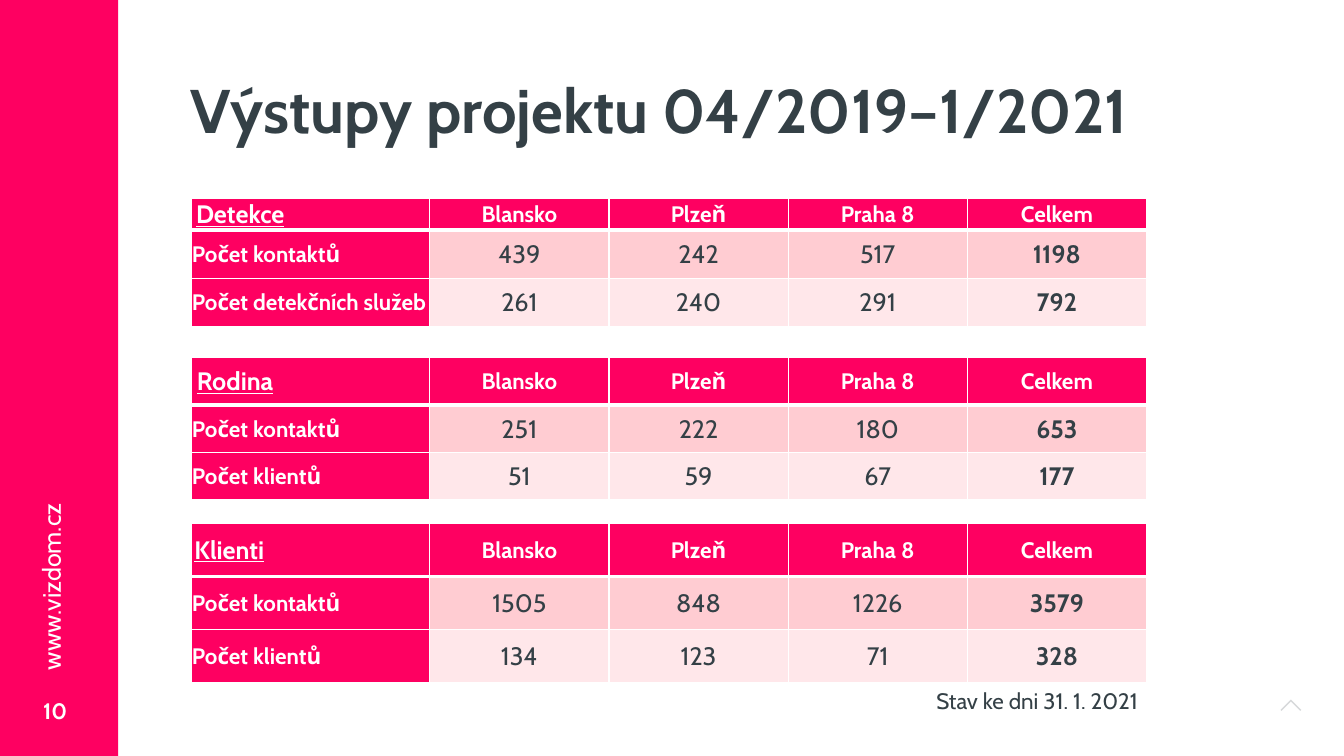
from lxml import etree
from pptx import Presentation, util as u
from pptx.dml.color import RGBColor
from pptx.enum import shapes, text
from pptx.oxml import ns

HUES = {"pink": "FE0061", "rose": "FFCCD2", "pale": "FFE7EA",
        "ink": "344046", "white": "FFFFFF"}
CITIES = ["Blansko", "Plzeň", "Praha 8", "Celkem"]
TABLES = [
    (141.9, [22.4, 34.4, 34.4], "Detekce", 3.6,
     [["Počet kontaktů", "439", "242", "517", "1198"],
      ["Počet detekčních služeb", "261", "240", "291", "792"]]),
    (255.6, [33.7] * 3, "Rodina", 4.3,
     [["Počet kontaktů", "251", "222", "180", "653"],
      ["Počet klientů", "51", "59", "67", "177"]]),
    (373.8, [37.9] * 3, "Klienti", 2.5,
     [["Počet kontaktů", "1505", "848", "1226", "3579"],
      ["Počet klientů", "134", "123", "71", "328"]]),
]


class Deck:
    """Holds the style and the current slide, and draws each kind of element."""

    def __init__(self, font):
        self.font = font
        self.file = Presentation()
        self.file.slide_width, self.file.slide_height = u.Pt(960), u.Pt(540)
        self.slide = self.file.slides.add_slide(self.file.slide_layouts[5])

    def hue(self, name):
        return RGBColor.from_string(HUES[name])

    def paint(self, item, name):
        item.fill.solid()
        item.fill.fore_color.rgb = self.hue(name)

    def run(self, para, words, size, hue, bold=False, line=False):
        run = para.add_run()
        run.text = words
        font = run.font
        font.name, font.size = self.font, u.Pt(size)
        font.bold, font.underline = bold, line
        font.color.rgb = self.hue(hue)

    def title(self, box, words):
        head = self.slide.shapes.title
        head.left, head.top, head.width, head.height = map(u.Pt, box)
        self.paint(head, "white")
        frame = head.text_frame
        frame.auto_size = text.MSO_AUTO_SIZE.NONE
        frame.vertical_anchor = text.MSO_ANCHOR.MIDDLE
        frame.margin_left = frame.margin_right = 0
        para = frame.paragraphs[0]
        para.alignment, para.line_spacing = text.PP_ALIGN.LEFT, 0.9
        self.run(para, words, 44, "ink", True)

    def label(self, box, words, size, hue, bold=False, turn=0,
              side="LEFT", anchor="TOP"):
        shape = self.slide.shapes.add_textbox(*map(u.Pt, box))
        shape.rotation = turn
        frame = shape.text_frame
        frame.word_wrap = True
        frame.vertical_anchor = text.MSO_ANCHOR[anchor]
        para = frame.paragraphs[0]
        para.alignment = text.PP_ALIGN[side]
        self.run(para, words, size, hue, bold)

    def finish(self, shape, hue):
        self.paint(shape, hue)
        shape.line.fill.background()
        shape.shadow.inherit = False

    def bar(self, box, hue):
        kind = shapes.MSO_SHAPE.RECTANGLE
        self.finish(self.slide.shapes.add_shape(kind, *map(u.Pt, box)), hue)

    def arrow(self, x, y):
        tenth = [(x * 10 + dx, y * 10 + dy) for dx, dy in
                 [(0, 0), (74, 74), (67, 81), (0, 14), (-67, 81), (-74, 74)]]
        pen = self.slide.shapes.build_freeform(*tenth[0], scale=u.Pt(0.1))
        pen.add_line_segments(tenth[1:], close=True)
        shape = pen.convert_to_shape()
        self.finish(shape, "ink")
        tint = shape.fill._xPr.find(".//" + ns.qn("a:srgbClr"))
        etree.SubElement(tint, ns.qn("a:alpha"), val="20000")

    def edge(self, cell, row):
        props = cell._tc.get_or_add_tcPr()
        for side in "LRTB":
            thick = (row, side) in [(0, "B"), (1, "T")]
            line = etree.SubElement(props, ns.qn("a:ln" + side),
                                    w=str(u.Pt(3 if thick else 1)))
            fill = etree.SubElement(line, ns.qn("a:solidFill"))
            etree.SubElement(fill, ns.qn("a:srgbClr"), val=HUES["white"])

    def cell(self, cell, words, row, col, inset):
        self.edge(cell, row)
        dark = row == 0 or col == 0
        name = row == 0 and col == 0
        self.paint(cell, "pink" if dark else ["rose", "pale"][row - 1])
        cell.vertical_anchor = text.MSO_ANCHOR.MIDDLE
        cell.margin_left = u.Pt(inset if name else 0.7)
        cell.margin_right = cell.margin_top = u.Pt(0.7)
        cell.margin_bottom = 0
        para = cell.text_frame.paragraphs[0]
        para.alignment = text.PP_ALIGN.CENTER if col else text.PP_ALIGN.LEFT
        size = 16 if dark and not name else 18
        self.run(para, words, size, "white" if dark else "ink",
                 dark or col == len(CITIES), name)

    def table(self, top, highs, name, inset, rows):
        wides = [170.6] + [128] * len(CITIES)
        grid = self.slide.shapes.add_table(
            len(highs), len(wides), u.Pt(136.4), u.Pt(top),
            u.Pt(sum(wides)), u.Pt(sum(highs))).table
        for col, wide in zip(grid.columns, wides):
            col.width = u.Pt(wide)
        for row, high in zip(grid.rows, highs):
            row.height = u.Pt(high)
        for r, row in enumerate([[name] + CITIES] + rows):
            for c, words in enumerate(row):
                self.cell(grid.cell(r, c), words, r, c, inset)


def main():
    deck = Deck("Cabin")
    deck.arrow(922.1, 499.7)
    deck.bar((0, 0, 84.4, 546.5), "pink")
    deck.label((23.8, 486, 36, 43.2), "10", 16, "white", True, anchor="MIDDLE")
    deck.label((-49, 385.2, 171.4, 29.5), "www.vizdom.cz", 18, "white", turn=270)
    deck.title((136.4, 28.8, 758.2, 104.4), "Výstupy projektu 04/2019–1/2021")
    for block in TABLES:
        deck.table(*block)
    deck.label((480.2, 487.4, 339.8, 26.6), "Stav ke dni 31. 1. 2021", 16, "ink",
               side="RIGHT")
    deck.file.save("out.pptx")


if __name__ == "__main__":
    main()
